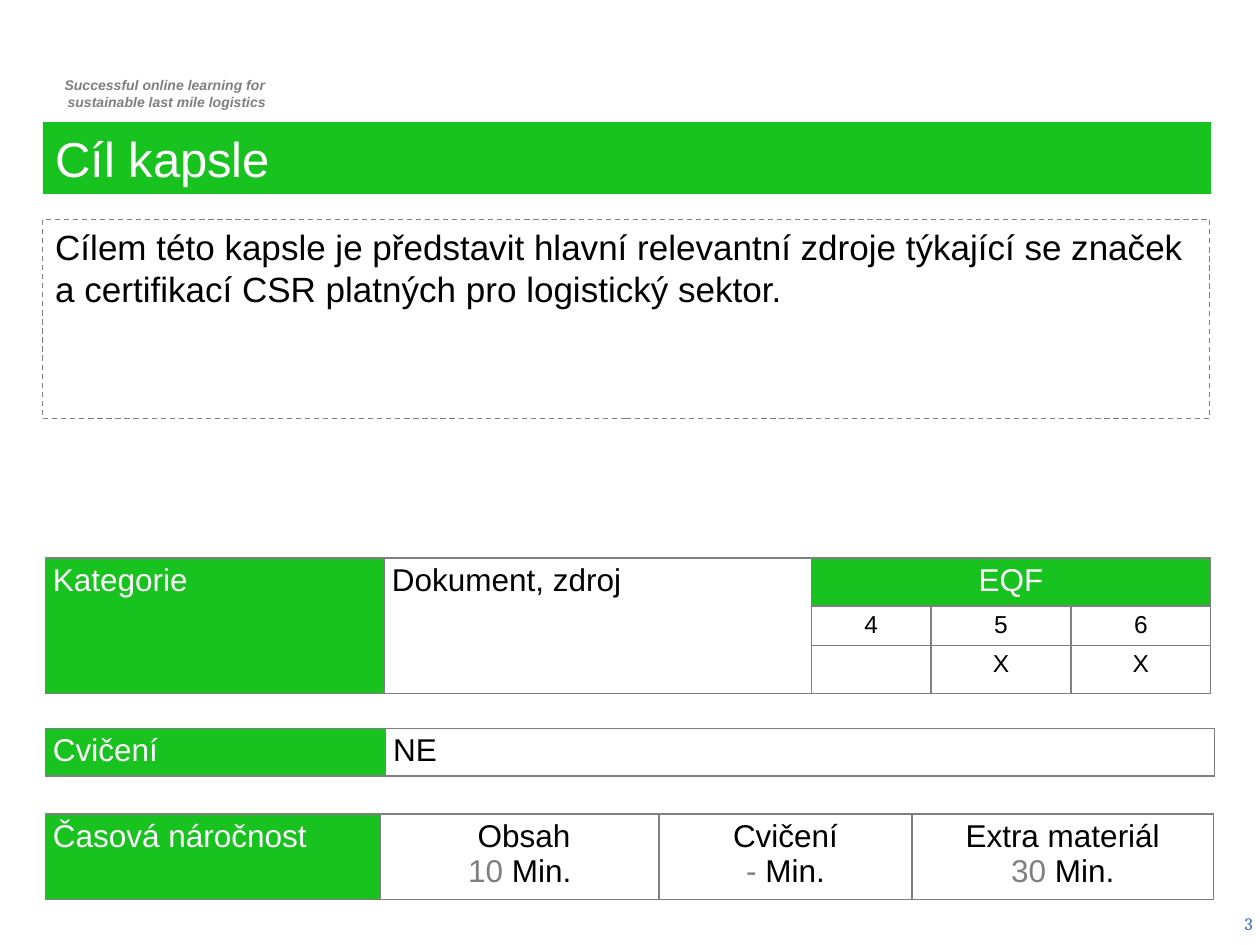
"""Build the capsule goal slide with its category, exercise and time tables."""
from dataclasses import dataclass

import pptx
import pptx.dml.color
import pptx.enum.dml
import pptx.enum.shapes
import pptx.enum.text
import pptx.oxml
import pptx.oxml.ns
import pptx.util

Inches = pptx.util.Inches
RGBColor = pptx.dml.color.RGBColor
Align = pptx.enum.text.PP_ALIGN

GREEN = RGBColor(0x18, 0xC3, 0x20)
GREY = RGBColor(0x7F, 0x7F, 0x7F)
BLUE = RGBColor(0x33, 0x66, 0xCC)
BLACK = RGBColor(0, 0, 0)
WHITE = RGBColor(255, 255, 255)


@dataclass(frozen=True)
class Area:
    left: float
    top: float
    width: float
    height: float

    def lengths(self) -> list[int]:
        return [Inches(value) for value in (self.left, self.top, self.width, self.height)]


@dataclass(frozen=True)
class Entry:
    row: int
    column: int
    text: str
    minutes: str = ""
    size: int = 18
    green: bool = False
    align: Align = Align.JUSTIFY
    rows: int = 1
    columns: int = 1


@dataclass(frozen=True)
class Grid:
    left: float
    top: float
    widths: tuple[float, ...]
    heights: tuple[float, ...]
    entries: tuple[Entry, ...]


GRIDS = (
    Grid(0.36, 4.43, (2.69, 3.39, 0.95, 1.11, 1.11), (0.37, 0.31, 0.37), (
        Entry(0, 0, "Kategorie", green=True, rows=3),
        Entry(0, 1, "Dokument, zdroj", rows=3),
        Entry(0, 2, "EQF", green=True, align=Align.CENTER, columns=3),
        *(Entry(1, column, level, size=14, align=Align.CENTER)
          for column, level in enumerate("456", start=2)),
        *(Entry(2, column, "X", size=14, align=Align.CENTER) for column in (3, 4)),
    )),
    Grid(0.36, 5.78, (2.7, 6.58), (0.37,), (
        Entry(0, 0, "Cvičení", green=True),
        Entry(0, 1, "NE"),
    )),
    Grid(0.36, 6.46, (2.66, 2.21, 2.01, 2.39), (0.67,), (
        Entry(0, 0, "Časová náročnost", green=True),
        Entry(0, 1, " Obsah", minutes="10 ", align=Align.CENTER),
        Entry(0, 2, "Cvičení", minutes="- ", align=Align.CENTER),
        Entry(0, 3, "Extra materiál", minutes="30 ", align=Align.CENTER),
    )),
)


def add_text(para, text: str, *, size: float = 18, color: RGBColor = BLACK,
             font: str = "Arial", emphasis: bool = False, align: Align = Align.LEFT) -> None:
    para.alignment = align
    span = para.add_run()
    span.text = text
    span.font.size = pptx.util.Pt(size)
    span.font.name = font
    span.font.color.rgb = color
    span.font.bold = span.font.italic = emphasis


def add_text_box(page, area: Area):
    frame = page.shapes.add_textbox(*area.lengths()).text_frame
    frame.word_wrap = True
    return frame


def add_box(page, area: Area):
    box = page.shapes.add_shape(pptx.enum.shapes.MSO_SHAPE.RECTANGLE, *area.lengths())
    box.shadow.inherit = False
    box.text_frame.word_wrap = True
    box.text_frame.vertical_anchor = pptx.enum.text.MSO_ANCHOR.TOP
    return box


def add_borders(cell) -> None:
    properties = cell._tc.get_or_add_tcPr()
    for side in "LRTB":
        properties.append(pptx.oxml.parse_xml(
            f'<a:ln{side} {pptx.oxml.ns.nsdecls("a")} w="{pptx.util.Pt(1)}">'
            f'<a:solidFill><a:srgbClr val="{GREY}"/></a:solidFill></a:ln{side}>'))


def fill_entry(table, entry: Entry) -> None:
    cell = table.cell(entry.row, entry.column)
    if entry.rows * entry.columns > 1:
        cell.merge(table.cell(entry.row + entry.rows - 1, entry.column + entry.columns - 1))
    if entry.green:
        cell.fill.solid()
        cell.fill.fore_color.rgb = GREEN
    frame = cell.text_frame
    add_text(frame.paragraphs[0], entry.text, size=entry.size, align=entry.align,
             color=WHITE if entry.green else BLACK)
    if entry.minutes:
        para = frame.add_paragraph()
        add_text(para, entry.minutes, color=GREY, align=entry.align)
        add_text(para, "Min.", align=entry.align)


def add_grid(page, grid: Grid) -> None:
    area = Area(grid.left, grid.top, sum(grid.widths), sum(grid.heights))
    table = page.shapes.add_table(len(grid.heights), len(grid.widths), *area.lengths()).table
    table.first_row = table.horz_banding = False
    for column, width in zip(table.columns, grid.widths):
        column.width = Inches(width)
    for row, height in zip(table.rows, grid.heights):
        row.height = Inches(height)
    for cell in table.iter_cells():
        cell.margin_left = cell.margin_right = Inches(0.06)
        cell.margin_top = cell.margin_bottom = Inches(0.04)
        add_borders(cell)
        cell.fill.background()
    for entry in grid.entries:
        fill_entry(table, entry)


def main() -> None:
    deck = pptx.Presentation()
    deck.slide_width, deck.slide_height = Inches(10), Inches(7.5)
    page = deck.slides.add_slide(deck.slide_layouts[6])

    motto = add_text_box(page, Area(0.29, 0.56, 2.03, 0.37))
    for para, text in (
        (motto.paragraphs[0], "Successful online learning for "),
        (motto.add_paragraph(), "sustainable last mile logistics"),
    ):
        add_text(para, text, size=8, color=GREY, emphasis=True, align=Align.CENTER)
        para._p.get_or_add_pPr().set("marL", str(Inches(0.04)))

    number = add_text_box(page, Area(7.71, 7.13, 2.33, 0.4))
    number.vertical_anchor = pptx.enum.text.MSO_ANCHOR.MIDDLE
    add_text(number.paragraphs[0], "3", size=10, color=BLUE, font="Cambria", align=Align.RIGHT)

    title = add_box(page, Area(0.34, 0.97, 9.27, 0.57))
    title.fill.solid()
    title.fill.fore_color.rgb = GREEN
    title.line.fill.background()
    add_text(title.text_frame.paragraphs[0], "Cíl kapsle", size=28, color=WHITE)

    goal = add_box(page, Area(0.34, 1.74, 9.26, 1.58))
    goal.fill.background()
    goal.line.color.rgb = GREY
    goal.line.width = pptx.util.Pt(0.75)
    goal.line.dash_style = pptx.enum.dml.MSO_LINE.DASH
    add_text(goal.text_frame.paragraphs[0],
             "Cílem této kapsle je představit hlavní relevantní zdroje týkající se značek "
             "a certifikací CSR platných pro logistický sektor.", size=20)

    for grid in GRIDS:
        add_grid(page, grid)
    deck.save("out.pptx")


if __name__ == "__main__":
    main()
